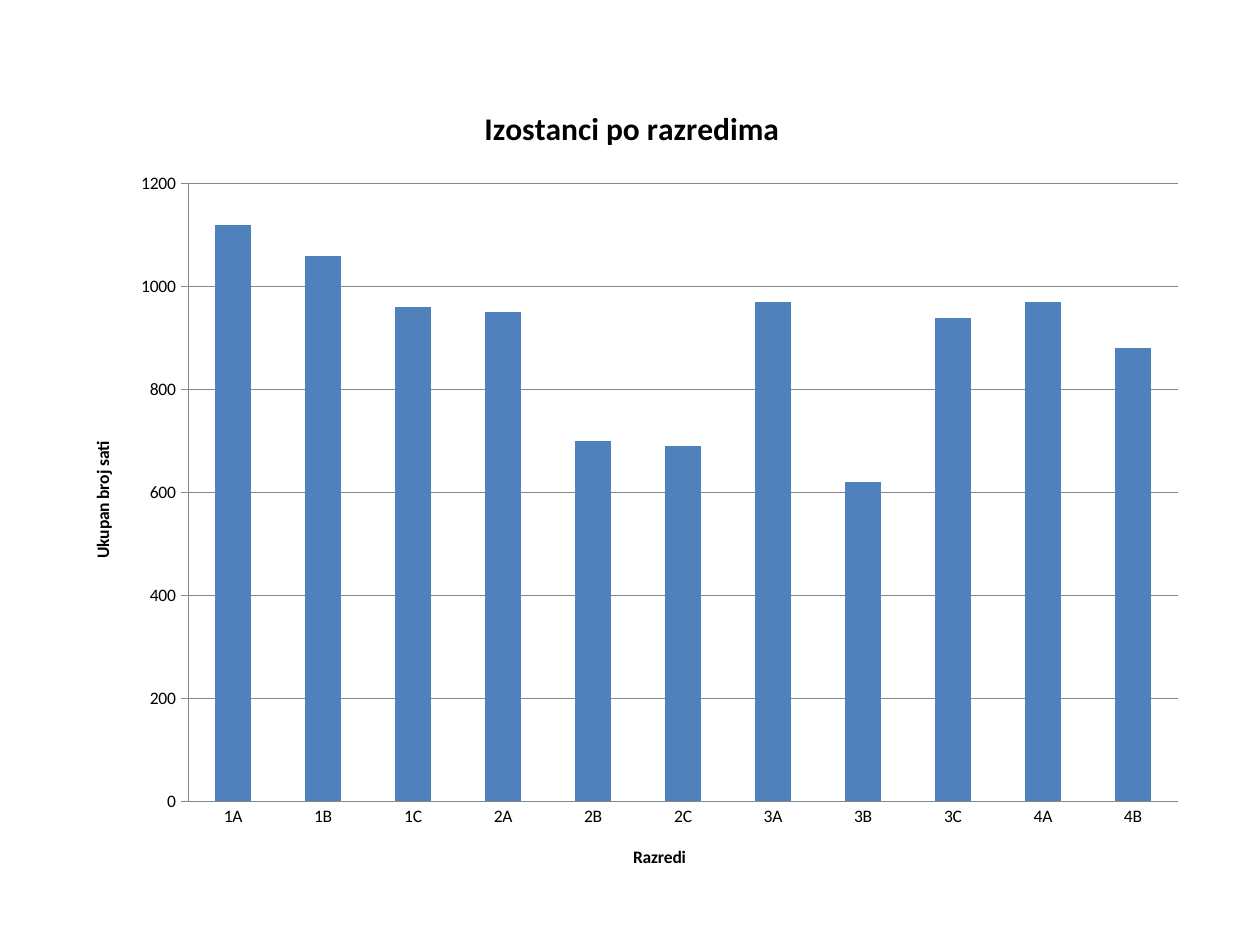
from lxml import etree
from pptx import Presentation
from pptx.chart.data import CategoryChartData
from pptx.dml.color import RGBColor
from pptx.enum.chart import XL_CHART_TYPE, XL_TICK_MARK
from pptx.oxml.ns import qn
from pptx.util import Inches, Pt

COLUMNS = XL_CHART_TYPE.COLUMN_CLUSTERED
TICK_NONE = XL_TICK_MARK.NONE
TICK_CROSS = XL_TICK_MARK.CROSS
BLACK, GRAY, BLUE = "000000", "868686", "4F81BD"


def color(hex_value):
    return RGBColor.from_string(hex_value)


def set_title(titled, text, size):
    frame = titled.text_frame if hasattr(titled, "text_frame") else titled.axis_title.text_frame
    frame.text = text
    font = frame.paragraphs[0].font
    font.name, font.size, font.bold = "Calibri", Pt(size), True
    font.color.rgb = color(BLACK)


prs = Presentation()
prs.slide_width, prs.slide_height = Inches(10), Inches(7.5)
slide = prs.slides.add_slide(prs.slide_layouts[6])

# Absence hours by class
absences = CategoryChartData()
absences.categories = ["1A", "1B", "1C", "2A", "2B", "2C", "3A", "3B", "3C", "4A", "4B"]
absences.add_series("Series 1", [1120, 1060, 960, 950, 700, 690, 970, 620, 940, 970, 880])
chart = slide.shapes.add_chart(
    COLUMNS, Inches(0.5), Inches(0.62), Inches(9.03), Inches(6.45), absences
).chart
chart.has_legend = False
chart.font.name, chart.font.size = "Calibri", Pt(10)
chart.font.color.rgb = color(BLACK)
set_title(chart.chart_title, "Izostanci po razredima", 18)
chart.chart_title.include_in_layout = False

# Columns
plot = chart.plots[0]
plot.gap_width = 150
plot.vary_by_categories = False
hours = plot.series[0]
hours.format.fill.solid()
hours.format.fill.fore_color.rgb = color(BLUE)

# Axes
classes_axis, hours_axis = chart.category_axis, chart.value_axis
set_title(classes_axis, "Razredi", 10)
set_title(hours_axis, "Ukupan broj sati", 10)
classes_axis.major_tick_mark = TICK_NONE
hours_axis.major_tick_mark = TICK_CROSS
hours_axis.minimum_scale, hours_axis.maximum_scale = 0, 1200
hours_axis.major_unit = 200
hours_axis.has_major_gridlines = True
for lined in (classes_axis, hours_axis, hours_axis.major_gridlines):
    lined.format.line.color.rgb = color(GRAY)
    lined.format.line.width = Pt(0.75)

# Plot area position, as fractions of the chart
plot_area = chart.plots[0]._element.getparent()
for old_layout in plot_area.findall(qn("c:layout")):
    plot_area.remove(old_layout)
layout = etree.Element(qn("c:layout"))
plot_area.insert(0, layout)
manual = etree.SubElement(layout, qn("c:manualLayout"))
for tag, value in (
    ("layoutTarget", "inner"), ("xMode", "edge"), ("yMode", "edge"),
    ("x", 0.11), ("y", 0.13), ("w", 0.87), ("h", 0.76),
):
    etree.SubElement(manual, qn(f"c:{tag}")).set("val", str(value))

prs.save("out.pptx")
